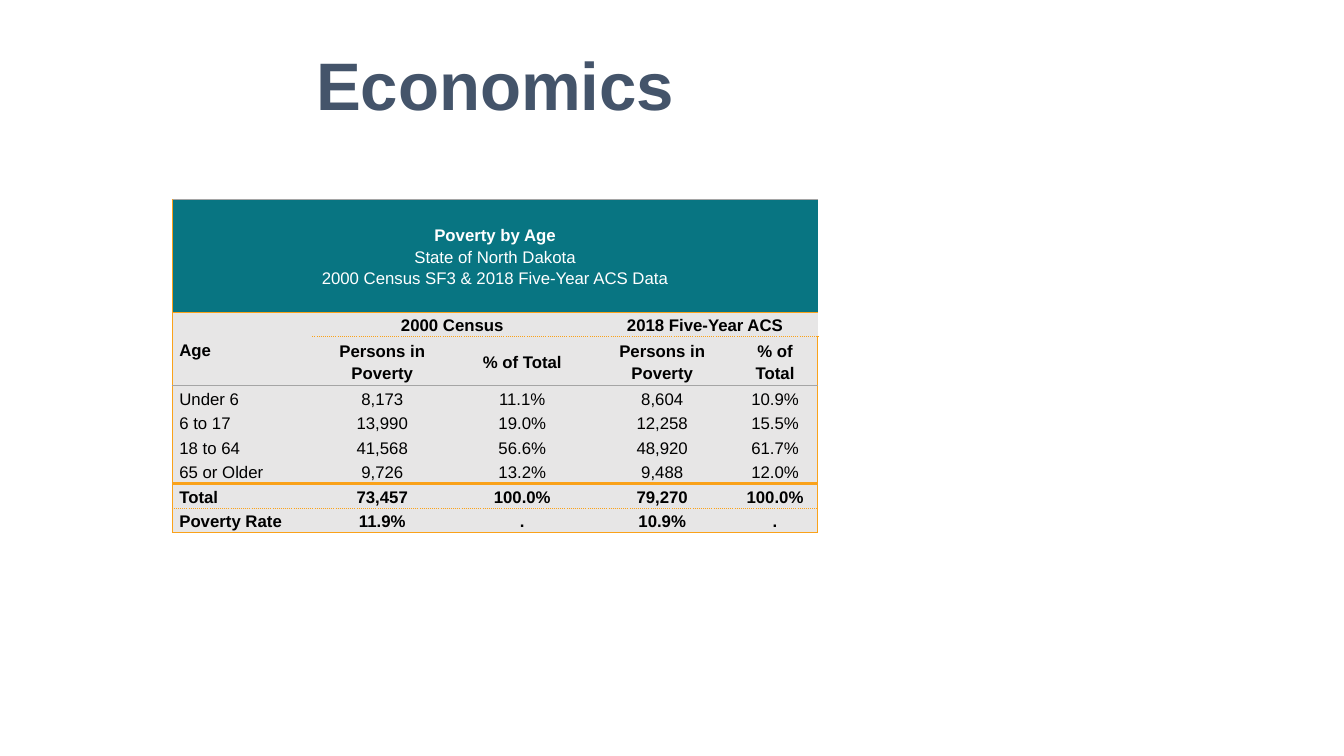
from dataclasses import dataclass

from lxml import etree
from pptx import Presentation
from pptx.dml.color import RGBColor
from pptx.enum.text import MSO_ANCHOR, PP_ALIGN
from pptx.oxml.ns import qn
from pptx.slide import Slide
from pptx.table import Table, _Cell
from pptx.text.text import _Paragraph
from pptx.util import Pt

MIDDLE, TOP = MSO_ANCHOR.MIDDLE, MSO_ANCHOR.TOP
CENTER, LEFT = PP_ALIGN.CENTER, PP_ALIGN.LEFT


@dataclass(frozen=True)
class Theme:
    """Colours and type sizes of the slide."""
    font: str = "Arial"
    heading: str = "44546A"
    banner: str = "087582"
    body: str = "E7E6E6"
    accent: str = "FAA21A"
    hairline: str = "A5A5A5"
    light: str = "FFFFFF"
    dark: str = "000000"
    heading_size: float = 48
    table_size: float = 12


@dataclass(frozen=True)
class Rule:
    """A line along cell edges."""
    color: str
    width: float = 1
    dash: str = "solid"


@dataclass(frozen=True)
class PovertyRow:
    """A row of the poverty table."""
    height: float
    labels: tuple[str, ...]
    bold: bool = False
    banner: bool = False


THEME = Theme()
EDGE = Rule(THEME.accent)
DOTTED = Rule(THEME.accent, dash="sysDot")
THICK = Rule(THEME.accent, 2.25)
HAIRLINE = Rule(THEME.hairline, 0.75)

COLUMN_WIDTHS = (100, 100, 100, 100, 61.2)
LINE_HEIGHT = 17.5
BANNER = "Poverty by Age\nState of North Dakota\n2000 Census SF3 & 2018 Five-Year ACS Data"
ROWS = (
    PovertyRow(80.5, (BANNER, "", "", "", ""), banner=True),
    PovertyRow(LINE_HEIGHT, ("Age", "2000 Census", "", "2018 Five-Year ACS", ""), bold=True),
    PovertyRow(2 * LINE_HEIGHT, ("", "Persons in Poverty", "% of Total",
                                 "Persons in Poverty", "% of Total"), bold=True),
    PovertyRow(LINE_HEIGHT, ("Under 6", "8,173", "11.1%", "8,604", "10.9%")),
    PovertyRow(LINE_HEIGHT, ("6 to 17", "13,990", "19.0%", "12,258", "15.5%")),
    PovertyRow(LINE_HEIGHT, ("18 to 64", "41,568", "56.6%", "48,920", "61.7%")),
    PovertyRow(LINE_HEIGHT, ("65 or Older", "9,726", "13.2%", "9,488", "12.0%")),
    PovertyRow(LINE_HEIGHT, ("Total", "73,457", "100.0%", "79,270", "100.0%"), bold=True),
    PovertyRow(LINE_HEIGHT, ("Poverty Rate", "11.9%", ".", "10.9%", "."), bold=True),
)
MERGES = (((0, 0), (0, 4)), ((1, 0), (2, 0)), ((1, 1), (1, 2)), ((1, 3), (1, 4)))
ROW_RULES = {0: HAIRLINE, 1: EDGE, 2: DOTTED, 3: HAIRLINE, 7: THICK, 8: DOTTED, 9: EDGE}


def style_paragraph(paragraph: _Paragraph, size: float, color: str, bold: bool) -> None:
    """Format the runs of one paragraph."""
    for run in paragraph.runs:
        run.font.name = THEME.font
        run.font.size = Pt(size)
        run.font.bold = bold
        run.font.color.rgb = RGBColor.from_string(color)


def add_heading(slide: Slide, wording: str) -> None:
    """Place the centred slide heading."""
    heading = slide.shapes.add_textbox(Pt(20.2), Pt(23.8), Pt(667.4), Pt(500.4))
    frame = heading.text_frame
    frame.word_wrap = True
    frame.vertical_anchor = TOP
    frame.margin_top = Pt(7)
    frame.text = wording
    frame.paragraphs[0].alignment = CENTER
    style_paragraph(frame.paragraphs[0], THEME.heading_size, THEME.heading, True)


def set_borders(cell: _Cell, edges: tuple[Rule | None, ...]) -> None:
    """Set left, right, top and bottom edges of a cell."""
    properties = cell._tc.get_or_add_tcPr()
    for position, (side, rule) in enumerate(zip("LRTB", edges)):
        line = etree.Element(qn(f"a:ln{side}"))
        if rule is None:
            line.set("w", "0")
            etree.SubElement(line, qn("a:noFill"))
        else:
            line.set("w", str(Pt(rule.width)))
            fill = etree.SubElement(line, qn("a:solidFill"))
            etree.SubElement(fill, qn("a:srgbClr"), val=rule.color)
            etree.SubElement(line, qn("a:prstDash"), val=rule.dash)
        properties.insert(position, line)


def row_rule(boundary: int, column: int) -> Rule | None:
    """Return the rule on a row boundary within one column."""
    if boundary == 2 and column == 0:
        return None
    return ROW_RULES.get(boundary)


def fill_cell(table: Table, row_index: int, column: int) -> None:
    """Write and format one cell of the poverty table."""
    row = ROWS[row_index]
    cell = table.cell(row_index, column)
    cell.fill.solid()
    cell.fill.fore_color.rgb = RGBColor.from_string(THEME.banner if row.banner else THEME.body)
    cell.vertical_anchor = MIDDLE
    cell.margin_left = cell.margin_right = Pt(5)
    cell.margin_top = cell.margin_bottom = Pt(0)
    cell.text_frame.text = row.labels[column]
    for line_index, paragraph in enumerate(cell.text_frame.paragraphs):
        paragraph.alignment = CENTER if row.banner or column else LEFT
        paragraph.line_spacing = 1.15
        paragraph.font.size = Pt(THEME.table_size)
        bold = row.bold or (row.banner and line_index == 0)
        color = THEME.light if row.banner else THEME.dark
        style_paragraph(paragraph, THEME.table_size, color, bold)
    right_rule = HAIRLINE if row.banner else EDGE
    set_borders(cell, (
        EDGE if column == 0 else None,
        right_rule if column == len(COLUMN_WIDTHS) - 1 else None,
        row_rule(row_index, column),
        row_rule(row_index + 1, column),
    ))


def add_poverty_table(slide: Slide) -> None:
    """Place the table of poverty by age."""
    height = sum(row.height for row in ROWS)
    table = slide.shapes.add_table(len(ROWS), len(COLUMN_WIDTHS), Pt(123.1), Pt(142.6),
                                   Pt(sum(COLUMN_WIDTHS)), Pt(height)).table
    for column, width in enumerate(COLUMN_WIDTHS):
        table.columns[column].width = Pt(width)
    for row_index, row in enumerate(ROWS):
        table.rows[row_index].height = Pt(row.height)
        for column in range(len(COLUMN_WIDTHS)):
            fill_cell(table, row_index, column)
    for first, last in MERGES:
        table.cell(*first).merge(table.cell(*last))


def main() -> None:
    """Build and save the presentation."""
    presentation = Presentation()
    presentation.slide_width, presentation.slide_height = Pt(960), Pt(540)
    slide = presentation.slides.add_slide(presentation.slide_layouts[6])
    add_heading(slide, "Economics")
    add_poverty_table(slide)
    presentation.save("out.pptx")


if __name__ == "__main__":
    main()
